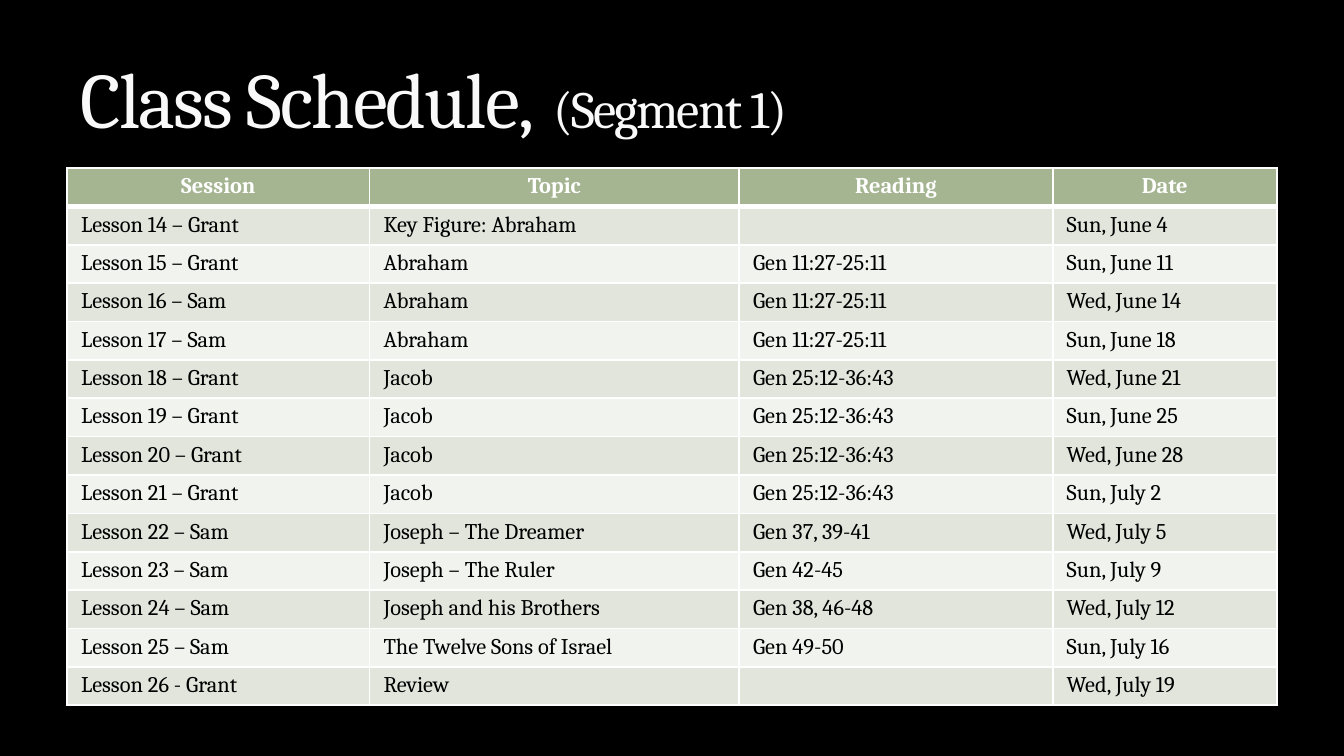
import pptx
import pptx.dml.color
import pptx.enum.text
import pptx.oxml.ns
import pptx.util
from lxml import etree

PX = 9525
FONT = "Cambria"
HEAD_FILL = "A5B592"
BAND_FILLS = ["E1E5DC", "F0F3EE"]
HEAD_FORMAT = {"name": FONT, "size": pptx.util.Pt(12), "bold": True}
BODY_FORMAT = {"name": FONT, "size": pptx.util.Pt(12), "bold": False}
CELL_FORMAT = {"margin_left": 10, "margin_right": 10, "margin_top": 4, "margin_bottom": 4}

COLUMNS = [("Session", 216), ("Topic", 264), ("Reading", 224), ("Date", 160)]
LESSONS = [
    ("Lesson 14 – Grant", "Key Figure: Abraham", "", "Sun, June 4"),
    ("Lesson 15 – Grant", "Abraham", "Gen 11:27-25:11", "Sun, June 11"),
    ("Lesson 16 – Sam", "Abraham", "Gen 11:27-25:11", "Wed, June 14"),
    ("Lesson 17 – Sam", "Abraham", "Gen 11:27-25:11", "Sun, June 18"),
    ("Lesson 18 – Grant", "Jacob", "Gen 25:12-36:43", "Wed, June 21"),
    ("Lesson 19 – Grant", "Jacob", "Gen 25:12-36:43", "Sun, June 25"),
    ("Lesson 20 – Grant", "Jacob", "Gen 25:12-36:43", "Wed, June 28"),
    ("Lesson 21 – Grant", "Jacob", "Gen 25:12-36:43", "Sun, July 2"),
    ("Lesson 22 – Sam", "Joseph – The Dreamer", "Gen 37, 39-41", "Wed, July 5"),
    ("Lesson 23 – Sam", "Joseph – The Ruler", "Gen 42-45", "Sun, July 9"),
    ("Lesson 24 – Sam", "Joseph and his Brothers", "Gen 38, 46-48", "Wed, July 12"),
    ("Lesson 25 – Sam", "The Twelve Sons of Israel", "Gen 49-50", "Sun, July 16"),
    ("Lesson 26 - Grant", "Review", "", "Wed, July 19"),
]


def px(n):
    return pptx.util.Emu(round(n * PX))


def color(value):
    return pptx.dml.color.RGBColor.from_string(value)


def set_fill(obj, value):
    obj.fill.solid()
    obj.fill.fore_color.rgb = color(value)


def apply_format(obj, values):
    for key, value in values.items():
        setattr(obj, key, value)


def add_run(p, text, values, rgb):
    r = p.add_run()
    r.text = text
    apply_format(r.font, values)
    r.font.color.rgb = color(rgb)
    return r


def sub(parent, tag, **attrs):
    return etree.SubElement(parent, pptx.oxml.ns.qn(tag), **attrs)


def set_borders(cell, widths):
    tcPr = cell._tc.get_or_add_tcPr()
    for side, width in zip("LRTB", widths):
        ln = sub(tcPr, f"a:ln{side}", w=str(pptx.util.Pt(width)))
        sub(sub(ln, "a:solidFill"), "a:srgbClr", val="FFFFFF")


def fill_cell(cell, text, header, fill):
    set_borders(cell, (1, 1, 1, 3) if header else (1, 1, 1, 1))
    set_fill(cell, fill)
    apply_format(cell, {key: px(n) for key, n in CELL_FORMAT.items()})
    p = cell.text_frame.paragraphs[0]
    if header:
        p.alignment = pptx.enum.text.PP_ALIGN.CENTER
    if text:
        add_run(p, text, HEAD_FORMAT if header else BODY_FORMAT, "FFFFFF" if header else "000000")
    else:
        sub(p._p, "a:endParaRPr", sz="1200")


def add_title(s, x, y, w, h):
    tf = s.shapes.add_textbox(px(x), px(y), px(w), px(h)).text_frame
    apply_format(tf, {"word_wrap": True, "vertical_anchor": pptx.enum.text.MSO_ANCHOR.BOTTOM})
    p = tf.paragraphs[0]
    for text, size in [("Class Schedule,", 42), ("  (Segment 1)", 28)]:
        r = add_run(p, text, {"name": FONT, "size": pptx.util.Pt(size)}, "F9F9F9")
        r.font._element.set("spc", "-100")


def add_schedule(s, x, y, w, h):
    rows = [[name for name, _ in COLUMNS], *LESSONS]
    table = s.shapes.add_table(len(rows), len(COLUMNS), px(x), px(y), px(w), px(h)).table
    table.horz_banding = False
    total = sum(width for _, width in COLUMNS)
    for column, (_, width) in zip(table.columns, COLUMNS):
        column.width = px(w * width / total)
    for i, values in enumerate(rows):
        table.rows[i].height = px(h / len(rows))
        fill = BAND_FILLS[(i - 1) % 2] if i else HEAD_FILL
        for j, text in enumerate(values):
            fill_cell(table.cell(i, j), text, i == 0, fill)


def main():
    prs = pptx.Presentation()
    apply_format(prs, {"slide_width": px(960), "slide_height": px(540)})
    s = prs.slides.add_slide(prs.slide_layouts[6])
    set_fill(s.background, "000000")
    add_schedule(s, 48, 120, 864, 384)
    add_title(s, 48, 12, 864, 96)
    prs.save("out.pptx")


if __name__ == "__main__":
    main()
